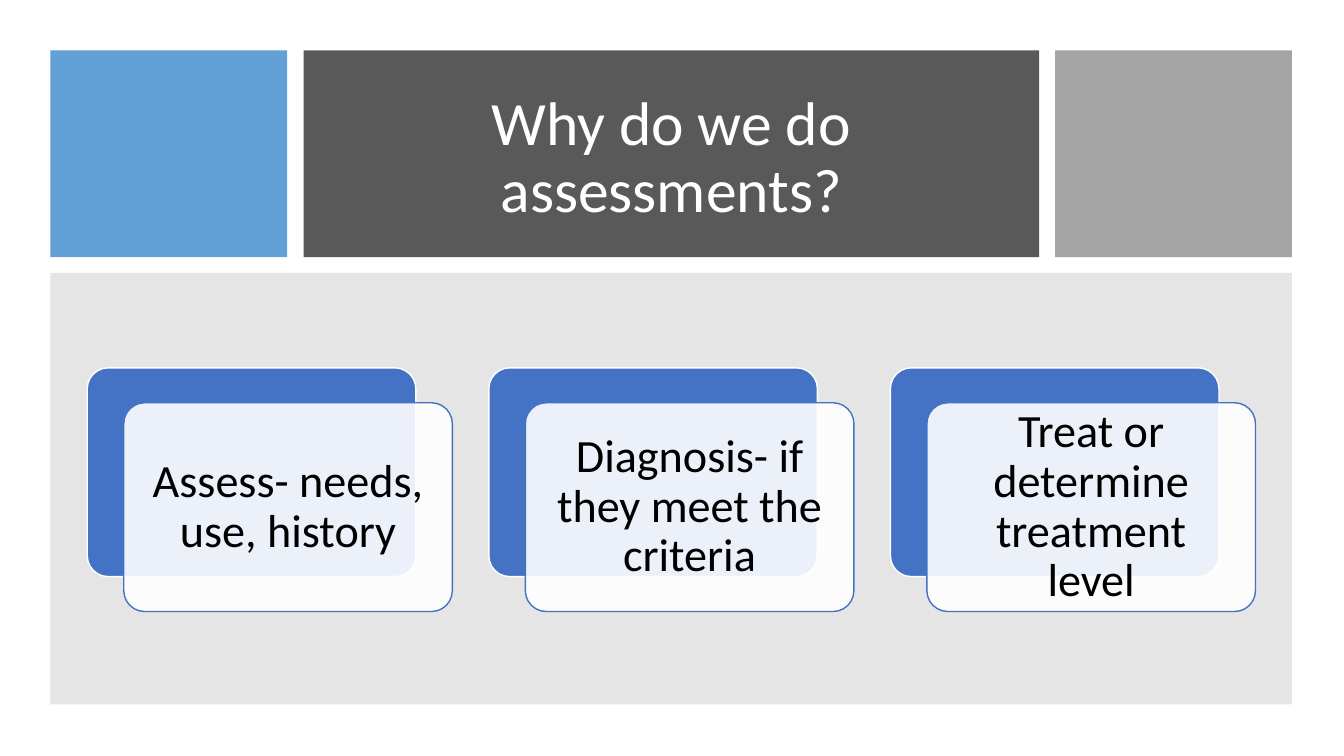
from dataclasses import dataclass
from typing import Optional

from lxml.etree import SubElement
from pptx import Presentation
from pptx.dml.color import RGBColor
from pptx.enum.shapes import MSO_SHAPE as Preset
from pptx.enum.text import MSO_ANCHOR as Anchor, MSO_AUTO_SIZE as AutoSize, PP_ALIGN as Align
from pptx.oxml.ns import qn
from pptx.shapes.autoshape import Shape
from pptx.slide import Slide
from pptx.text.text import TextFrame
from pptx.util import Cm, Pt

FONT = "Calibri"
BLUE, WHITE, BLACK = "4472C4", "FFFFFF", "000000"


@dataclass(frozen=True)
class Area:
    left: float
    top: float
    width: float
    height: float

    def moved(self, right: float, down: float) -> "Area":
        return Area(self.left + right, self.top + down, self.width, self.height)


@dataclass(frozen=True)
class Style:
    fill: str
    opacity: int = 100
    line: Optional[str] = None
    preset: Preset = Preset.RECTANGLE


@dataclass(frozen=True)
class Panel:
    area: Area
    style: Style


TITLE_BAND = Panel(Area(7.65, 1.27, 18.54, 5.21), Style("595959"))
SIDE_PANELS = [
    Panel(Area(1.27, 1.27, 5.97, 5.21), Style("5B9BD5", 95)),
    Panel(Area(26.59, 1.27, 5.97, 5.21), Style("A5A5A5")),
    Panel(Area(1.27, 6.88, 31.29, 10.87), Style("808080", 20)),
]
TITLE_AREA = Area(8.46, 2.03, 16.92, 3.96)

BACK_CARD = Style(BLUE, line=WHITE, preset=Preset.ROUNDED_RECTANGLE)
FRONT_CARD = Style(WHITE, 90, BLUE, Preset.ROUNDED_RECTANGLE)
FIRST_CARD = Area(2.2, 9.27, 8.28, 5.26)
CARD_PITCH = 10.12
CARD_SHIFT = (0.92, 0.88)
REASONS = [
    "Assess- needs, use, history",
    "Diagnosis- if they meet the criteria",
    "Treat or determine treatment level",
]


def color(value: str) -> RGBColor:
    return RGBColor.from_string(value)


def draw(page: Slide, area: Area, style: Style) -> Shape:
    box = page.shapes.add_shape(
        style.preset, Cm(area.left), Cm(area.top), Cm(area.width), Cm(area.height)
    )
    box.shadow.inherit = False
    if style.preset == Preset.ROUNDED_RECTANGLE:
        box.adjustments[0] = 0.1
    box.fill.solid()
    box.fill.fore_color.rgb = color(style.fill)
    if style.opacity < 100:
        tint = box.fill._xPr.find(".//" + qn("a:srgbClr"))
        SubElement(tint, qn("a:alpha"), val=str(style.opacity * 1000))
    if style.line:
        box.line.color.rgb = color(style.line)
        box.line.width = Pt(1)
    else:
        box.line.fill.background()
    return box


def write(frame: TextFrame, text: str, size: int, text_color: str) -> None:
    frame.word_wrap = True
    frame.auto_size = AutoSize.NONE
    frame.vertical_anchor = Anchor.MIDDLE
    para = frame.paragraphs[0]
    para.alignment = Align.CENTER
    para.line_spacing = 0.9
    span = para.add_run()
    span.text = text
    span.font.name = FONT
    span.font.size = Pt(size)
    span.font.color.rgb = color(text_color)


def add_title(page: Slide, text: str) -> None:
    band = draw(page, TITLE_BAND.area, TITLE_BAND.style)
    title = page.shapes.title
    title.left, title.top = Cm(TITLE_AREA.left), Cm(TITLE_AREA.top)
    title.width, title.height = Cm(TITLE_AREA.width), Cm(TITLE_AREA.height)
    write(title.text_frame, text, 44, WHITE)
    # Bring the title in front of its band
    band._element.addnext(title._element)


def add_card(page: Slide, area: Area, text: str) -> None:
    draw(page, area, BACK_CARD)
    front = draw(page, area.moved(*CARD_SHIFT), FRONT_CARD)
    frame = front.text_frame
    frame.margin_left = frame.margin_right = Cm(0.36)
    frame.margin_top = frame.margin_bottom = Cm(0.36)
    write(frame, text, 33, BLACK)


def main() -> None:
    deck = Presentation()
    deck.slide_width, deck.slide_height = Cm(33.87), Cm(19.05)
    page = deck.slides.add_slide(deck.slide_layouts.get_by_name("Title Only"))

    # Header and background panels
    add_title(page, "Why do we do assessments?")
    for panel in SIDE_PANELS:
        draw(page, panel.area, panel.style)

    # Row of reasons
    for index, reason in enumerate(REASONS):
        add_card(page, FIRST_CARD.moved(index * CARD_PITCH, 0), reason)

    deck.save("out.pptx")


if __name__ == "__main__":
    main()
